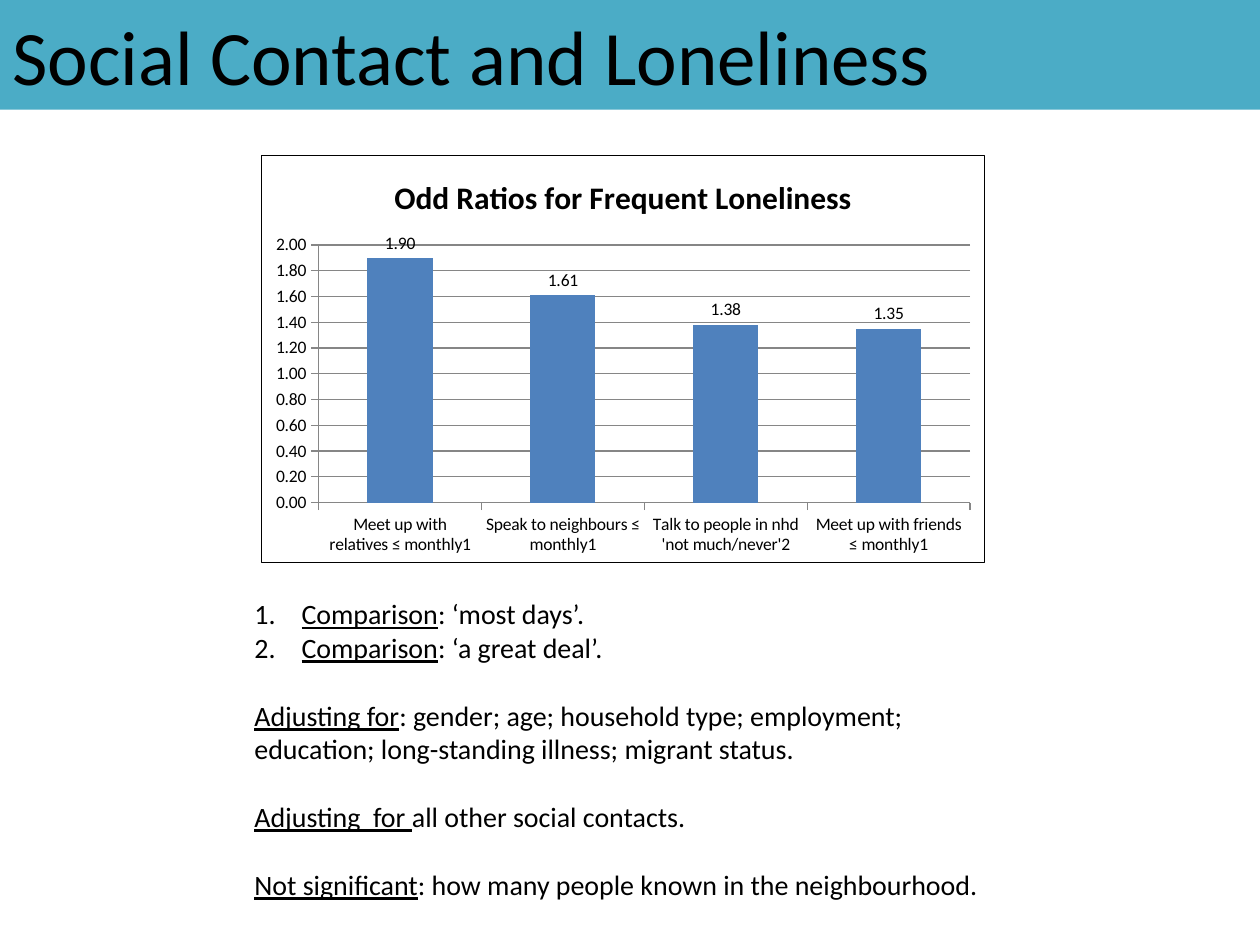
from dataclasses import dataclass

from lxml import etree
from pptx import Presentation
from pptx.chart.data import CategoryChartData
from pptx.dml.color import RGBColor
from pptx.enum.chart import XL_CHART_TYPE, XL_LABEL_POSITION, XL_TICK_MARK
from pptx.enum.shapes import MSO_SHAPE
from pptx.enum.text import MSO_ANCHOR, PP_ALIGN
from pptx.oxml import parse_xml
from pptx.oxml.ns import nsdecls, qn
from pptx.util import Cm, Pt

COLUMNS = XL_CHART_TYPE.COLUMN_CLUSTERED
OUTSIDE_END = XL_LABEL_POSITION.OUTSIDE_END
TICK_OUT = XL_TICK_MARK.OUTSIDE
RECTANGLE = MSO_SHAPE.RECTANGLE
MIDDLE = MSO_ANCHOR.MIDDLE
LEFT = PP_ALIGN.LEFT


@dataclass(frozen=True)
class Theme:
    font: str = "Calibri"
    text: RGBColor = RGBColor(0, 0, 0)
    banner: RGBColor = RGBColor(0x4B, 0xAC, 0xC6)
    bar: RGBColor = RGBColor(0x4F, 0x81, 0xBD)
    grid: RGBColor = RGBColor(0x86, 0x86, 0x86)
    heading_size: Pt = Pt(44)
    chart_title_size: Pt = Pt(18)
    note_size: Pt = Pt(16)
    chart_size: Pt = Pt(10)
    note_gap: Pt = Pt(19.5)
    thin: Pt = Pt(0.75)


@dataclass(frozen=True)
class Note:
    term: str
    detail: str
    numbered: bool = False


THEME = Theme()
NUMBER_FORMAT = "0.00"
ODDS_RATIOS = {
    "Meet up with relatives ≤ monthly1": 1.90,
    "Speak to neighbours ≤ monthly1": 1.61,
    "Talk to people in nhd 'not much/never'2": 1.38,
    "Meet up with friends ≤ monthly1": 1.35,
}
NOTES = [
    Note("Comparison", ": ‘most days’.", numbered=True),
    Note("Comparison", ": ‘a great deal’.", numbered=True),
    Note("Adjusting for", ": gender; age; household type; employment; education; "
         "long-standing illness; migrant status."),
    Note("Adjusting  for ", "all other social contacts."),
    Note("Not significant", ": how many people known in the neighbourhood."),
]


def style_font(font, size: Pt, bold: bool = False) -> None:
    font.name, font.size, font.bold = THEME.font, size, bold
    font.color.rgb = THEME.text


def add_span(para, text: str, size: Pt, underline: bool = False) -> None:
    span = para.add_run()
    span.text = text
    style_font(span.font, size)
    span.font.underline = underline


def number_paragraph(para) -> None:
    properties = para._p.get_or_add_pPr()
    properties.set("marL", str(Cm(0.95)))
    properties.set("indent", str(-Cm(0.95)))
    etree.SubElement(properties, qn("a:buFont"), typeface="+mj-lt")
    etree.SubElement(properties, qn("a:buAutoNum"), type="arabicPeriod")


def add_banner(page, text: str, width: int) -> None:
    banner = page.shapes.add_shape(RECTANGLE, 0, 0, width, Cm(2.21))
    banner.shadow.inherit = False
    banner.fill.solid()
    banner.fill.fore_color.rgb = THEME.banner
    banner.line.fill.background()
    banner.text_frame.vertical_anchor = MIDDLE
    para = banner.text_frame.paragraphs[0]
    para.alignment = LEFT
    add_span(para, text, THEME.heading_size)


def add_notes(page, notes: list[Note]) -> None:
    box = page.shapes.add_textbox(Cm(4.88), Cm(11.91), Cm(15.39), Cm(6.4))
    frame = box.text_frame
    frame.word_wrap = True
    for index, note in enumerate(notes):
        para = frame.paragraphs[0] if index == 0 else frame.add_paragraph()
        if note.numbered:
            number_paragraph(para)
        else:
            para.space_before = THEME.note_gap
        add_span(para, note.term, THEME.note_size, underline=True)
        add_span(para, note.detail, THEME.note_size)


def add_odds_chart(page, title: str, ratios: dict[str, float]) -> None:
    data = CategoryChartData(number_format=NUMBER_FORMAT)
    data.categories = list(ratios)
    data.add_series("Series 1", list(ratios.values()))
    chart = page.shapes.add_chart(
        COLUMNS, Cm(5.26), Cm(3.12), Cm(14.6), Cm(8.23), data).chart
    style_font(chart.font, THEME.chart_size)
    chart.has_legend = False

    # Chart title
    chart.has_title = True
    chart.chart_title.include_in_layout = False
    span = chart.chart_title.text_frame.paragraphs[0].add_run()
    span.text = title
    style_font(span.font, THEME.chart_title_size, bold=True)

    # Columns and value labels
    plot = chart.plots[0]
    plot.gap_width = 150
    plot.vary_by_categories = False
    fill = plot.series[0].format.fill
    fill.solid()
    fill.fore_color.rgb = THEME.bar
    plot.has_data_labels = True
    labels = plot.data_labels
    labels.show_value = True
    labels.number_format, labels.number_format_is_linked = NUMBER_FORMAT, False
    labels.position = OUTSIDE_END
    style_font(labels.font, THEME.chart_size)

    # Axes and gridlines
    scale = chart.value_axis
    scale.minimum_scale, scale.maximum_scale, scale.major_unit = 0, 2, 0.2
    scale.has_major_gridlines = True
    scale.tick_labels.number_format = NUMBER_FORMAT
    scale.tick_labels.number_format_is_linked = False
    for axis in (chart.category_axis, scale):
        axis.major_tick_mark = TICK_OUT
        style_font(axis.tick_labels.font, THEME.chart_size)
    for part in (chart.category_axis, scale, scale.major_gridlines):
        part.format.line.color.rgb = THEME.grid
        part.format.line.width = THEME.thin

    # Chart border
    border = parse_xml(
        f'<c:spPr {nsdecls("c", "a")}><a:noFill/><a:ln w="{THEME.thin}"><a:solidFill>'
        f'<a:srgbClr val="{THEME.text}"/></a:solidFill></a:ln></c:spPr>')
    chart._chartSpace.find(qn("c:chart")).addnext(border)


def main() -> None:
    deck = Presentation()
    deck.slide_width, deck.slide_height = Cm(25.4), Cm(19.05)
    page = deck.slides.add_slide(deck.slide_layouts[6])
    add_notes(page, NOTES)
    add_banner(page, "Social Contact and Loneliness", deck.slide_width)
    add_odds_chart(page, "Odd Ratios for Frequent Loneliness", ODDS_RATIOS)
    deck.save("out.pptx")


if __name__ == "__main__":
    main()
